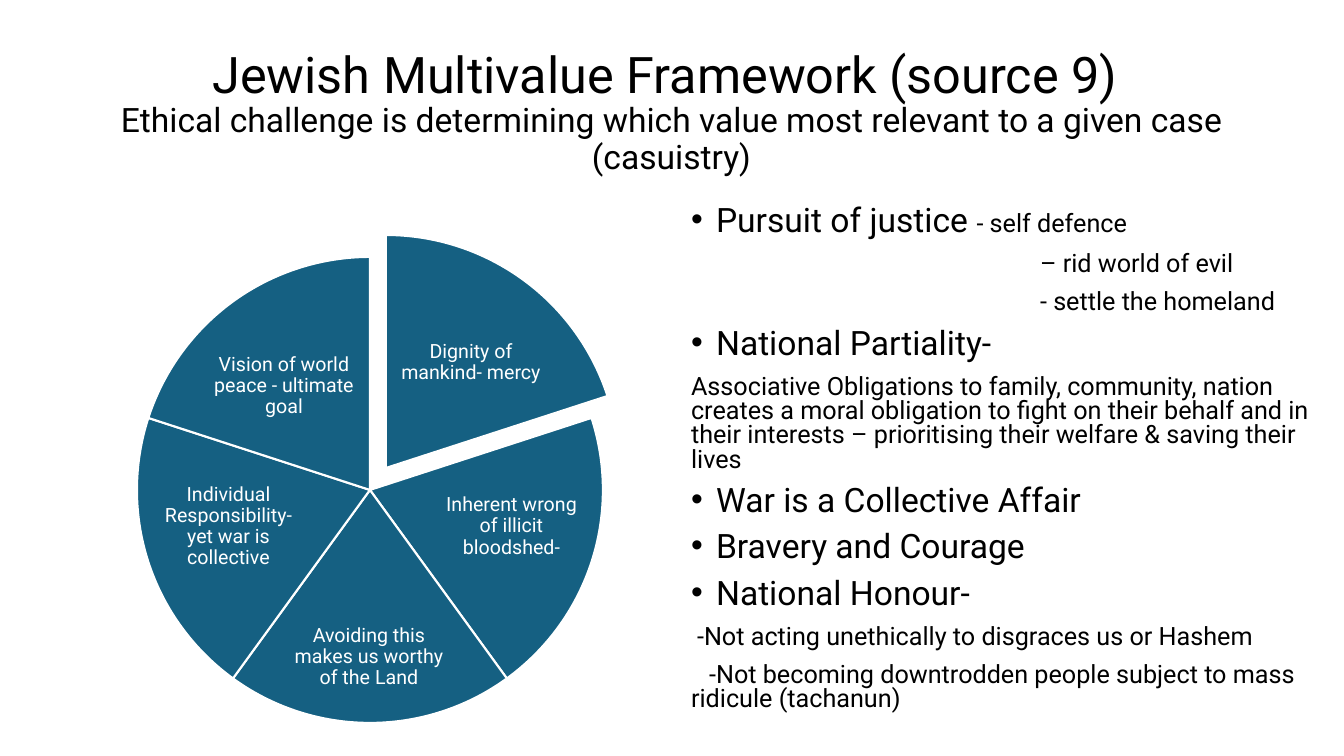
from typing import NamedTuple

from pptx import Presentation
from pptx.dml.color import RGBColor
from pptx.enum.shapes import MSO_SHAPE
from pptx.enum.text import MSO_ANCHOR, MSO_AUTO_SIZE, PP_ALIGN
from pptx.oxml.ns import qn
from pptx.slide import Slide
from pptx.util import Emu, Pt
from lxml.etree import SubElement

EMU_PER_PX = 12192000 / 1344
BLACK = RGBColor(0x00, 0x00, 0x00)
WHITE = RGBColor(0xFF, 0xFF, 0xFF)
TEAL = RGBColor(0x15, 0x60, 0x82)
FONT = "Roboto"
LARGE, SMALL, LABEL = 24, 18, 14
PIE_LEFT, PIE_TOP, PIE_SIZE = 137, 257, 466
BULLET_INDENT = 25


class Box(NamedTuple):
    left: int
    top: int
    width: int
    height: int


class Slice(NamedTuple):
    text: str
    label: Box
    shift_x: int = 0
    shift_y: int = 0


class Line(NamedTuple):
    text: str
    size: int = SMALL
    margin: int = 0
    first_indent: int = 0
    detail: str = ""


def bullet(text: str, detail: str = "") -> Line:
    return Line(text, LARGE, BULLET_INDENT, -BULLET_INDENT, detail)


SLICES = [
    Slice("Dignity of mankind- mercy", Box(392, 304, 158, 117), 16, -22),
    Slice("Inherent wrong of illicit bloodshed-", Box(442, 468, 139, 117)),
    Slice("Avoiding this makes us worthy of the Land", Box(286, 607, 166, 100)),
    Slice("Individual Responsibility- yet war is collective", Box(159, 468, 139, 117)),
    Slice("Vision of world peace - ultimate goal", Box(205, 328, 158, 117)),
]
LINES = [
    bullet("Pursuit of justice ", "- self defence"),
    Line("– rid world of evil", margin=349),
    Line("- settle the homeland", margin=349),
    bullet("National Partiality-"),
    Line("Associative Obligations to family, community, nation creates a moral "
         "obligation to fight on their behalf and in their interests – "
         "prioritising their welfare & saving their lives"),
    bullet("War is a Collective Affair"),
    bullet("Bravery and Courage"),
    bullet("National Honour-"),
    Line("-Not acting unethically to disgraces us or Hashem", first_indent=6),
    Line("-Not becoming downtrodden people subject to mass ridicule (tachanun)",
         first_indent=18),
]


def px(value: float) -> Emu:
    return Emu(round(value * EMU_PER_PX))


def place(shape, box: Box) -> None:
    shape.left, shape.top, shape.width, shape.height = map(px, box)


def format_run(run, size: int, color: RGBColor = BLACK) -> None:
    run.font.name = FONT
    run.font.size = Pt(size)
    run.font.color.rgb = color


def fill_title(slide: Slide) -> None:
    title = slide.shapes.title
    place(title, Box(92, 40, 1159, 146))
    text_frame = title.text_frame
    text_frame.auto_size = MSO_AUTO_SIZE.NONE
    text_frame.vertical_anchor = MSO_ANCHOR.MIDDLE
    paragraph = text_frame.paragraphs[0]
    paragraph.text = ("Jewish Multivalue Framework (source 9) \v"
                      "Ethical challenge is determining which value most "
                      "relevant to a given case (casuistry)")
    paragraph.alignment = PP_ALIGN.CENTER
    paragraph.line_spacing = 0.9
    for run, size in zip(paragraph.runs, (36, LARGE)):
        format_run(run, size)


def draw_slice(slide: Slide, item: Slice, index: int) -> None:
    wedge = slide.shapes.add_shape(MSO_SHAPE.PIE, 0, 0, 0, 0)
    place(wedge, Box(PIE_LEFT + item.shift_x, PIE_TOP + item.shift_y,
                     PIE_SIZE, PIE_SIZE))
    sweep = 360 / len(SLICES)
    for side in range(2):
        degrees = (270 + (index + side) * sweep) % 360
        wedge.adjustments[side] = degrees * 0.6  # 60000 units a degree, over 100000
    wedge.shadow.inherit = False
    wedge.fill.solid()
    wedge.fill.fore_color.rgb = TEAL
    wedge.line.color.rgb = WHITE
    wedge.line.width = Pt(1.5)

    label = slide.shapes.add_textbox(*map(px, item.label))
    text_frame = label.text_frame
    text_frame.word_wrap = True
    text_frame.vertical_anchor = MSO_ANCHOR.MIDDLE
    text_frame.margin_left = text_frame.margin_right = px(2)
    text_frame.margin_top = text_frame.margin_bottom = px(2)
    paragraph = text_frame.paragraphs[0]
    paragraph.text = item.text
    paragraph.alignment = PP_ALIGN.CENTER
    paragraph.line_spacing = 0.9
    format_run(paragraph.runs[0], LABEL, WHITE)


def format_indent(paragraph, line: Line) -> None:
    """Set the indents, and a bullet where the first line hangs."""
    properties = paragraph._p.get_or_add_pPr()
    properties.set("marL", str(px(line.margin)))
    properties.set("indent", str(px(line.first_indent)))
    if line.first_indent < 0:
        SubElement(properties, qn("a:buFont"), typeface="Arial")
        SubElement(properties, qn("a:buChar"), char="•")
    else:
        SubElement(properties, qn("a:buNone"))


def fill_body(slide: Slide) -> None:
    body = slide.placeholders[1]
    place(body, Box(681, 202, 644, 554))
    text_frame = body.text_frame
    text_frame.auto_size = MSO_AUTO_SIZE.NONE
    text_frame.vertical_anchor = MSO_ANCHOR.TOP
    text_frame.text = "\n".join(line.text for line in LINES)
    for paragraph, line in zip(text_frame.paragraphs, LINES):
        paragraph.alignment = PP_ALIGN.LEFT
        paragraph.line_spacing = 0.8
        paragraph.space_before = Pt(10)
        format_indent(paragraph, line)
        format_run(paragraph.runs[0], line.size)
        if line.detail:
            run = paragraph.add_run()
            run.text = line.detail
            format_run(run, SMALL)


def main() -> None:
    presentation = Presentation()
    presentation.slide_width = px(1344)
    presentation.slide_height = px(756)
    slide = presentation.slides.add_slide(presentation.slide_layouts[1])
    fill_title(slide)
    for index, item in enumerate(SLICES):
        draw_slice(slide, item, index)
    fill_body(slide)
    presentation.save("out.pptx")


if __name__ == "__main__":
    main()
